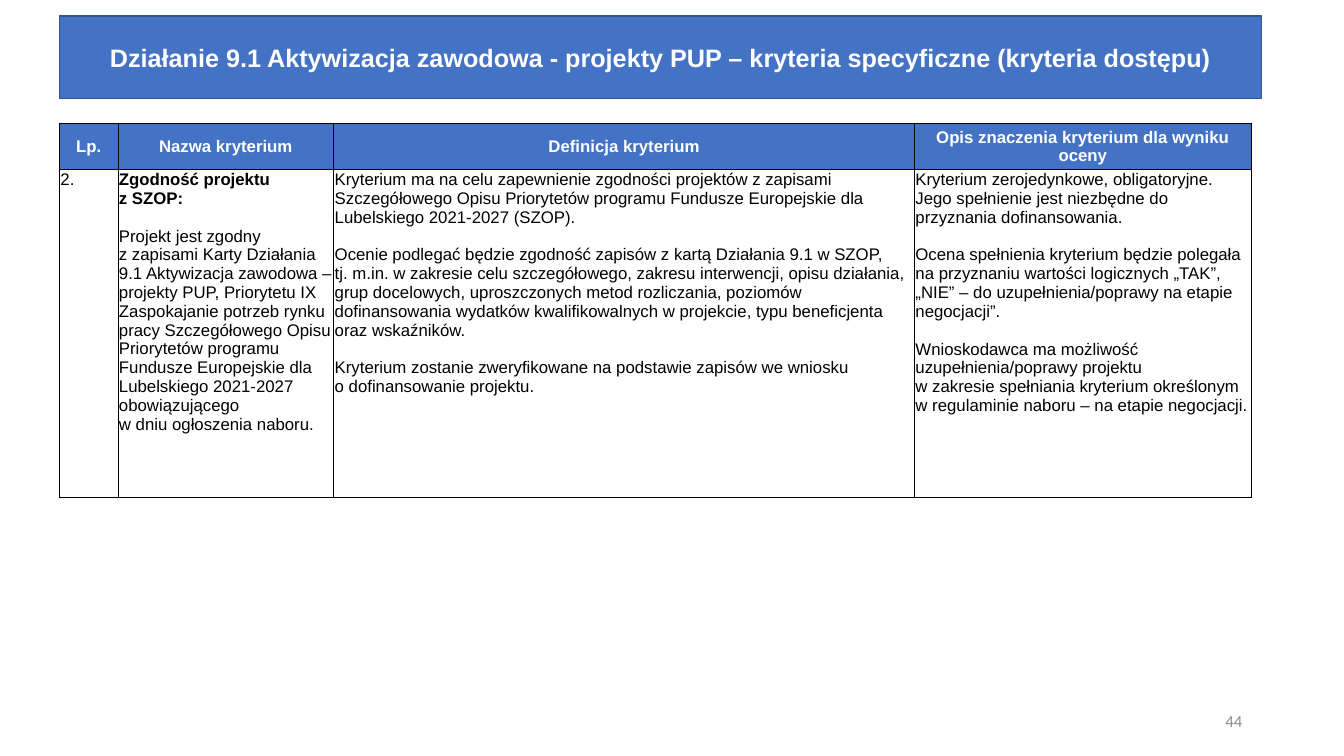
from lxml.etree import SubElement
from pptx import Presentation
from pptx.dml.color import RGBColor
from pptx.enum.text import MSO_ANCHOR, MSO_AUTO_SIZE, PP_ALIGN
from pptx.oxml.ns import qn
from pptx.util import Inches, Pt

BLUE, DARK_BLUE, WHITE, BLACK, GREY = "4472C4", "325491", "FFFFFF", "000000", "8C8C8C"
TITLE = "Działanie 9.1 Aktywizacja zawodowa - projekty PUP – kryteria specyficzne (kryteria dostępu)"
COLUMN_WIDTHS = (0.58, 2.14, 5.76, 3.34)
ROW_HEIGHTS = (0.46, 3.25)
HEADINGS = (
    "Lp.",
    "Nazwa kryterium",
    "Definicja kryterium",
    "Opis znaczenia kryterium dla wyniku oceny",
)
CRITERION = (
    ["2."],
    [
        "Zgodność projektu \nz SZOP:",
        "Projekt jest zgodny\nz zapisami Karty Działania 9.1 Aktywizacja zawodowa – projekty PUP, "
        "Priorytetu IX Zaspokajanie potrzeb rynku pracy Szczegółowego Opisu Priorytetów programu "
        "Fundusze Europejskie dla Lubelskiego 2021-2027 obowiązującego \nw dniu ogłoszenia naboru.",
    ],
    [
        "Kryterium ma na celu zapewnienie zgodności projektów z zapisami Szczegółowego Opisu "
        "Priorytetów programu Fundusze Europejskie dla Lubelskiego 2021-2027 (SZOP).",
        "Ocenie podlegać będzie zgodność zapisów z kartą Działania 9.1 w SZOP, \ntj. m.in. w zakresie "
        "celu szczegółowego, zakresu interwencji, opisu działania, grup docelowych, uproszczonych "
        "metod rozliczania, poziomów dofinansowania wydatków kwalifikowalnych w projekcie, typu "
        "beneficjenta oraz wskaźników.",
        "Kryterium zostanie zweryfikowane na podstawie zapisów we wniosku \no dofinansowanie projektu.",
    ],
    [
        "Kryterium zerojedynkowe, obligatoryjne. Jego spełnienie jest niezbędne do przyznania "
        "dofinansowania.",
        "Ocena spełnienia kryterium będzie polegała na przyznaniu wartości logicznych „TAK”,\n"
        "„NIE” – do uzupełnienia/poprawy na etapie negocjacji”.",
        "Wnioskodawca ma możliwość uzupełnienia/poprawy projektu \nw zakresie spełniania kryterium "
        "określonym w regulaminie naboru – na etapie negocjacji.",
    ],
)


def color(value):
    """Turn a hex string into a colour."""
    return RGBColor.from_string(value)


def write(paragraph, text, size=12, font="Arial", fill=BLACK, bold=False, align=PP_ALIGN.LEFT, before=0):
    """Fill a paragraph with formatted text, line breaks included."""
    paragraph.text = text
    paragraph.alignment = align
    paragraph.space_before = Pt(before)
    for run in paragraph.runs:
        run.font.size = Pt(size)
        run.font.name = font
        run.font.bold = bold
        run.font.color.rgb = color(fill)
    for line_break in paragraph._p.findall(qn("a:br")):
        SubElement(line_break, qn("a:rPr"), sz=str(size * 100))


def add_banner(slide, left, top, width, height):
    """Turn the title placeholder into the blue banner."""
    banner = slide.shapes.title
    banner.left, banner.top, banner.width, banner.height = map(Inches, (left, top, width, height))
    banner.fill.solid()
    banner.fill.fore_color.rgb = color(BLUE)
    banner.line.color.rgb = color(DARK_BLUE)
    banner.line.width = Pt(1)
    frame = banner.text_frame
    frame.auto_size = MSO_AUTO_SIZE.NONE
    frame.word_wrap = True
    frame.vertical_anchor = MSO_ANCHOR.MIDDLE
    write(frame.paragraphs[0], TITLE, size=18, fill=WHITE, bold=True, align=PP_ALIGN.CENTER)


def frame_cell(cell):
    """Give a cell thin black borders and narrow margins."""
    properties = cell._tc.get_or_add_tcPr()
    for side in ("lnL", "lnR", "lnT", "lnB"):
        border = SubElement(properties, qn(f"a:{side}"), w=str(Pt(0.5)))
        SubElement(SubElement(border, qn("a:solidFill")), qn("a:srgbClr"), val=BLACK)
    cell.margin_left = cell.margin_right = cell.margin_top = Inches(0.01)
    cell.margin_bottom = 0


def add_criteria(slide, left, top):
    """Place the table with the headings and one criterion."""
    criteria = slide.shapes.add_table(
        len(ROW_HEIGHTS), len(COLUMN_WIDTHS), Inches(left), Inches(top),
        Inches(sum(COLUMN_WIDTHS)), Inches(sum(ROW_HEIGHTS)),
    ).table
    criteria.first_row = criteria.horz_banding = False
    for row, height in zip(criteria.rows, ROW_HEIGHTS):
        row.height = Inches(height)
    for index, (width, heading, passages) in enumerate(zip(COLUMN_WIDTHS, HEADINGS, CRITERION)):
        criteria.columns[index].width = Inches(width)

        head = criteria.cell(0, index)
        frame_cell(head)
        head.fill.solid()
        head.fill.fore_color.rgb = color(BLUE)
        head.vertical_anchor = MSO_ANCHOR.MIDDLE
        write(head.text_frame.paragraphs[0], heading, fill=WHITE, bold=True, align=PP_ALIGN.CENTER)

        body = criteria.cell(1, index)
        frame_cell(body)
        body.fill.background()
        for order, passage in enumerate(passages):
            frame = body.text_frame
            paragraph = frame.add_paragraph() if order else frame.paragraphs[0]
            is_name = index == 1 and order == 0
            write(paragraph, passage, bold=is_name, before=13.5 if order else 0)


def add_page_number(slide, left, top, width, height):
    """Place the page number at the right of its box."""
    frame = slide.shapes.add_textbox(*map(Inches, (left, top, width, height))).text_frame
    frame.word_wrap = True
    frame.vertical_anchor = MSO_ANCHOR.MIDDLE
    write(frame.paragraphs[0], "44", font="Calibri", fill=GREY, align=PP_ALIGN.RIGHT)


def main():
    """Build the slide and save it."""
    deck = Presentation()
    deck.slide_width, deck.slide_height = Inches(13.33), Inches(7.5)
    slide = deck.slides.add_slide(deck.slide_layouts[5])
    add_banner(slide, 0.59, 0.16, 11.92, 0.82)
    add_criteria(slide, 0.59, 1.22)
    add_page_number(slide, 9.42, 6.95, 3, 0.4)
    deck.save("out.pptx")


if __name__ == "__main__":
    main()
